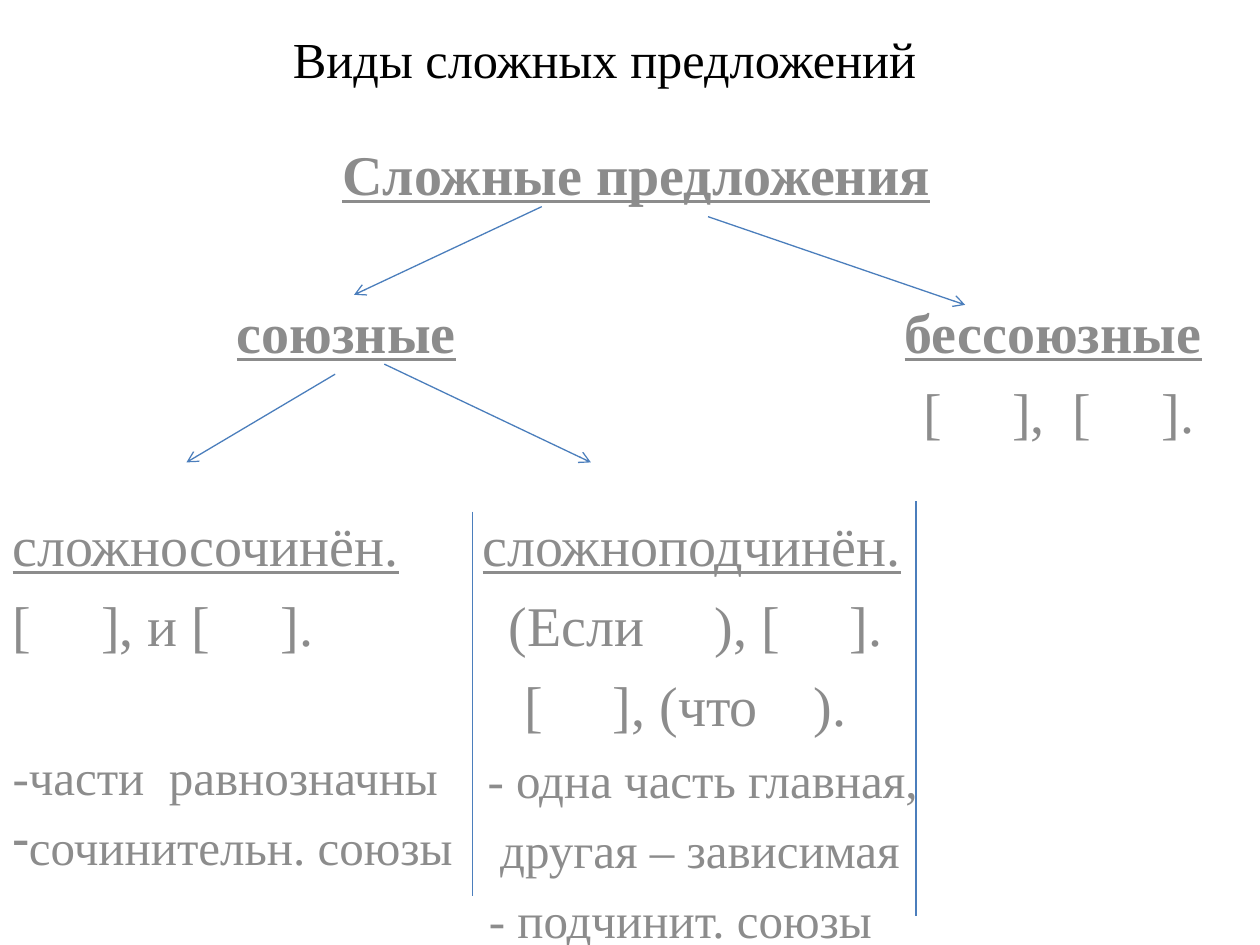
from lxml import etree
from pptx import Presentation
from pptx.dml.color import RGBColor
from pptx.enum import shapes, text
from pptx.oxml.ns import qn
from pptx.util import Inches, Pt

FONT = "Times New Roman"
BLACK = RGBColor(0x00, 0x00, 0x00)
GRAY = RGBColor(0x8C, 0x8C, 0x8C)
BLUE = RGBColor(0x4B, 0x7E, 0xBC)
BIG, SMALL = 32, 28
PAIR = "[     ],  [     ]."


def add_text(s, box, lines, color=GRAY, align=text.PP_ALIGN.LEFT):
    """Each line is (text, size, options); options: bold, underline, indent, before, bullet."""
    tb = s.shapes.add_textbox(*map(Inches, box))
    tf = tb.text_frame
    tf.word_wrap = True
    tf.margin_left = tf.margin_right = tf.margin_top = tf.margin_bottom = 0
    for i, (words, size, opts) in enumerate(lines):
        p = tf.paragraphs[0] if i == 0 else tf.add_paragraph()
        p.text = words
        p.alignment = align
        p.space_before = Pt(opts.get("before", round(size * 0.23, 1) if i else 0))
        f = p.font
        f.name, f.size, f.color.rgb = FONT, Pt(size), color
        f.bold, f.underline = opts.get("bold", False), opts.get("underline", False)
        pPr = p._p.get_or_add_pPr()
        pPr.set("marL", str(Inches(opts.get("indent", 0))))
        if "bullet" in opts:
            pPr.set("indent", str(-Inches(opts["indent"])))
            bullet = etree.Element(qn("a:buChar"), char=opts["bullet"])
            pPr.insert_element_before(bullet, "a:tabLst", "a:defRPr", "a:extLst")
    return tf


def add_line(s, start, end, arrow=False):
    c = s.shapes.add_connector(shapes.MSO_CONNECTOR.STRAIGHT,
                               *map(Inches, (*start, *end)))
    c.line.color.rgb = BLUE
    c.line.width = Pt(0.75)
    if arrow:
        etree.SubElement(c.line._get_or_add_ln(), qn("a:tailEnd"), type="arrow")
    etree.SubElement(c._element.spPr, qn("a:effectLst"))


def add_title(s, box):
    tf = add_text(s, box, [("Виды сложных предложений", 28.8, {})],
                  BLACK, text.PP_ALIGN.CENTER)
    tf.vertical_anchor = text.MSO_ANCHOR.MIDDLE


def add_tree(s, x, y):
    """Root heading, its two branches and the arrows between the levels."""
    head = {"bold": True, "underline": True}
    add_text(s, (x + 2.3, y, 5.5, 0.52), [("Сложные предложения", BIG, head)],
             align=text.PP_ALIGN.CENTER)
    add_text(s, (x + 1.88, y + 1.25, 2.2, 0.52), [("союзные", BIG, head)])
    add_text(s, (x + 7.18, y + 1.25, 2.7, 1.15),
             [("бессоюзные", BIG, head), (PAIR, BIG, {"indent": 0.15})])
    for x1, y1, x2, y2 in ((4.3, 0.53, 2.81, 1.23), (5.62, 0.61, 7.66, 1.31),
                           (2.66, 1.86, 1.48, 2.56), (3.05, 1.78, 4.69, 2.56)):
        add_line(s, (x + x1, y + y1), (x + x2, y + y2), arrow=True)


def add_compound_column(s, box):
    add_text(s, box, [
        ("сложносочинён.", BIG, {"underline": True}),
        ("[     ], и [     ].", BIG, {}),
        ("-части  равнозначны", SMALL, {"before": 51}),
        ("сочинительн. союзы", SMALL, {"bullet": "-", "indent": 0.13}),
    ])


def add_complex_column(s, box):
    add_text(s, box, [
        ("сложноподчинён.", BIG, {"underline": True}),
        ("(Если     ), [     ].", BIG, {"indent": 0.21}),
        ("[     ], (что    ).", BIG, {"indent": 0.33}),
        ("- одна часть главная,", SMALL, {"indent": 0.04}),
        ("другая – зависимая", SMALL, {"indent": 0.14}),
        ("- подчинит. союзы", SMALL, {"indent": 0.05}),
    ])


def main():
    prs = Presentation()
    prs.slide_width, prs.slide_height = Inches(10), Inches(7.5)
    s = prs.slides.add_slide(prs.slide_layouts[6])
    add_title(s, (0.55, 0.23, 8.5, 0.47))
    add_tree(s, 0, 1.11)
    add_compound_column(s, (0.1, 4.05, 3.6, 2.8))
    add_complex_column(s, (3.83, 4.05, 3.6, 3.4))
    add_line(s, (3.75, 4.06), (3.75, 7.11))
    add_line(s, (7.27, 3.98), (7.27, 7.27))
    prs.save("out.pptx")


if __name__ == "__main__":
    main()
